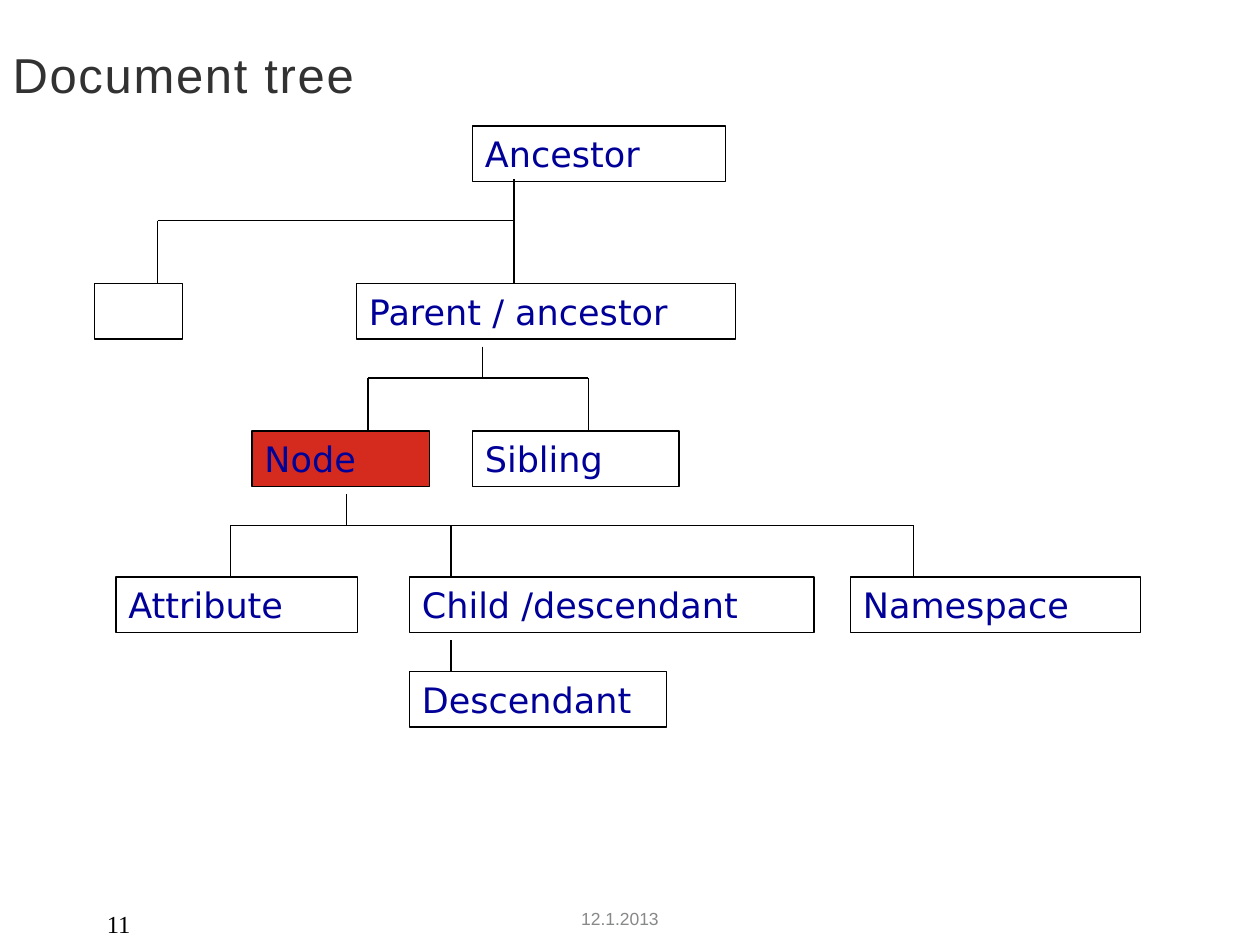
import pptx
import pptx.util
import pptx.dml.color
import pptx.enum.shapes
import pptx.enum.text
from lxml import etree

Inches = pptx.util.Inches
Pt = pptx.util.Pt
ANCHOR = pptx.enum.text.MSO_ANCHOR
ALIGN = pptx.enum.text.PP_ALIGN

COLORS = {
    "title": "323232",
    "label": "000099",
    "line": "000000",
    "current": "D52B1E",
    "number": "000000",
    "date": "878989",
}
BOX_HEIGHT = 0.44

LEVELS = [
    (1, [("Ancestor", 3.75, 2.01)]),
    (2.25, [("", 0.75, 0.7), ("Parent / ancestor", 2.83, 3.01)]),
    (3.42, [("Node", 2, 1.41), ("Sibling", 3.75, 1.64)]),
    (4.58, [("Attribute", 0.92, 1.92), ("Child /descendant", 3.25, 3.21),
            ("Namespace", 6.75, 2.3)]),
    (5.33, [("Descendant", 3.25, 2.04)]),
]
CURRENT_NODE = "Node"

# stem_x, stem_top, branch_y, child_xs, child_top
BRANCHES = [
    (4.08, 1.42, 1.75, [1.25, 4.08], 2.25),
    (3.83, 2.75, 3, [2.92, 4.67], 3.42),
    (2.75, 3.92, 4.17, [1.83, 3.58, 7.25], 4.58),
    (3.58, 5.08, 5.33, [], 5.33),
]

FOOTERS = [
    ("11", 0.75, 1.67, "Times New Roman", 14, "number", ALIGN.LEFT, ANCHOR.MIDDLE),
    ("12.1.2013", 2.5, 4.84, "Arial", 10, "date", ALIGN.CENTER, ANCHOR.TOP),
]


def rgb(role):
    return pptx.dml.color.RGBColor.from_string(COLORS[role])


def write(frame, text, font_name, size, role, align=ALIGN.LEFT, anchor=ANCHOR.MIDDLE):
    frame.word_wrap = True
    frame.auto_size = pptx.enum.text.MSO_AUTO_SIZE.NONE
    frame.vertical_anchor = anchor
    paragraph = frame.paragraphs[0]
    paragraph.text = text
    paragraph.alignment = align
    paragraph.font.name = font_name
    paragraph.font.size = Pt(size)
    paragraph.font.color.rgb = rgb(role)


def add_node(slide, label, left, top, width):
    node = slide.shapes.add_shape(
        pptx.enum.shapes.MSO_SHAPE.RECTANGLE,
        Inches(left), Inches(top), Inches(width), Inches(BOX_HEIGHT))
    node.shadow.inherit = False
    if label == CURRENT_NODE:
        node.fill.solid()
        node.fill.fore_color.rgb = rgb("current")
    else:
        node.fill.background()
    node.line.color.rgb = rgb("line")
    node.line.width = Pt(0.75)
    if label:
        write(node.text_frame, label, "DejaVu Sans", 20, "label")


def add_edge(slide, x1, y1, x2, y2):
    edge = slide.shapes.add_connector(
        pptx.enum.shapes.MSO_CONNECTOR.STRAIGHT,
        Inches(x1), Inches(y1), Inches(x2), Inches(y2))
    edge.line.color.rgb = rgb("line")
    edge.line.width = Pt(0.75)
    properties = edge._element.spPr
    etree.SubElement(properties, pptx.oxml.ns.qn("a:effectLst"))


def main():
    deck = pptx.Presentation()
    deck.slide_width, deck.slide_height = Inches(10), Inches(7.5)
    slide = deck.slides.add_slide(deck.slide_layouts[5])

    title = slide.shapes.title
    title.left, title.top = Inches(0), Inches(0.25)
    title.width, title.height = Inches(6.17), Inches(0.67)
    write(title.text_frame, "Document tree", "Arial", 28, "title")
    title.text_frame.paragraphs[0].runs[0].font._element.set("spc", "100")

    for top, nodes in LEVELS:
        for label, left, width in nodes:
            add_node(slide, label, left, top, width)

    for stem_x, stem_top, branch_y, child_xs, child_top in BRANCHES:
        add_edge(slide, stem_x, stem_top, stem_x, branch_y)
        if child_xs:
            add_edge(slide, child_xs[0], branch_y, child_xs[-1], branch_y)
        for child_x in child_xs:
            add_edge(slide, child_x, branch_y, child_x, child_top)

    for text, left, width, *style in FOOTERS:
        footer = slide.shapes.add_textbox(
            Inches(left), Inches(7.16), Inches(width), Inches(0.34))
        write(footer.text_frame, text, *style)

    deck.save("out.pptx")


if __name__ == "__main__":
    main()
